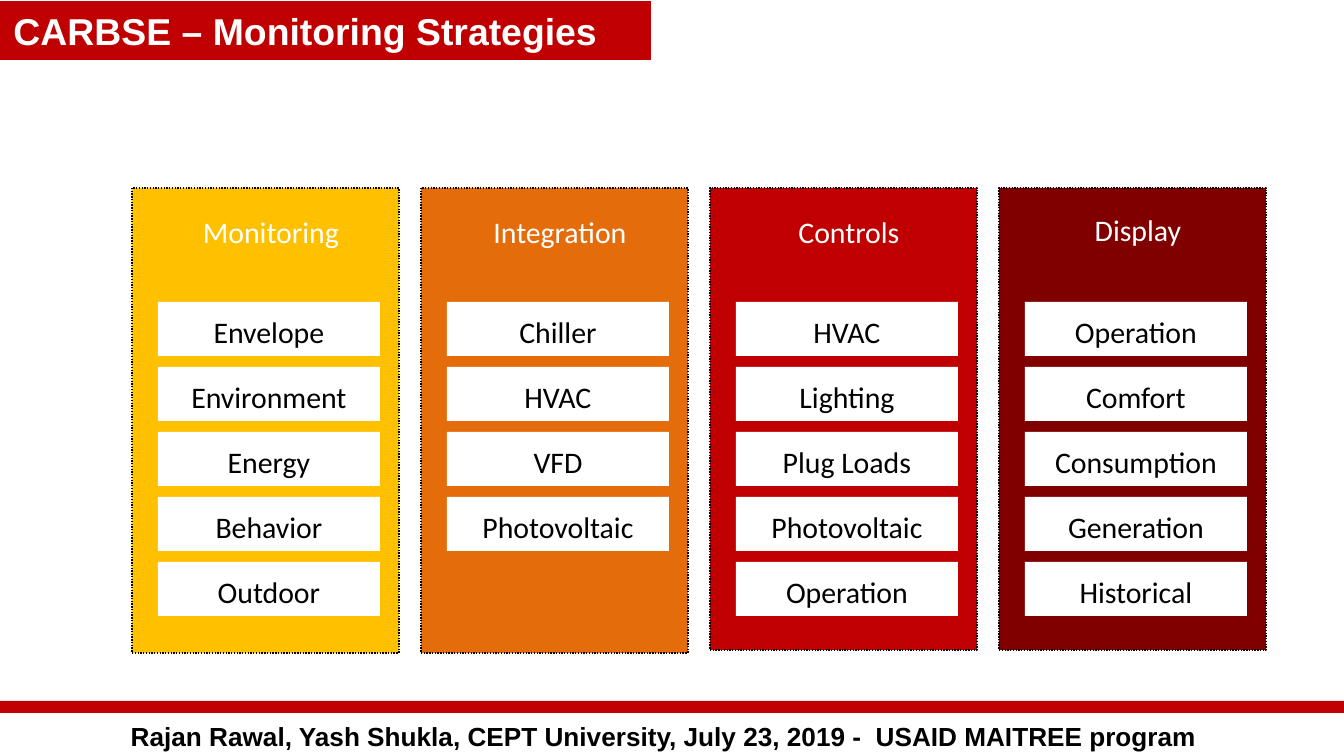
from pptx import Presentation
from pptx.dml.color import RGBColor
from pptx.enum.dml import MSO_LINE
from pptx.enum.shapes import MSO_SHAPE
from pptx.enum.text import MSO_ANCHOR, MSO_AUTO_SIZE, PP_ALIGN
from pptx.util import Emu, Pt

SCALE = 914400 / 134.4
RED = "C00000"
WHITE = "FFFFFF"
BLACK = "000000"

COLUMN_LEFT, COLUMN_TOP, COLUMN_WIDTH, COLUMN_PITCH = 132, 188, 267, 289
ITEM_TOP, ITEM_PITCH, ITEM_WIDTH, ITEM_HEIGHT = 302, 65, 222, 54
ITEM_INDENT, HEADING_INDENT = 26, 28

COLUMNS = [
    ("Monitoring", "FFC000", 465, 202,
     ["Envelope", "Environment", "Energy", "Behavior", "Outdoor"]),
    ("Integration", "E46C0A", 465, 202,
     ["Chiller", "HVAC", "VFD", "Photovoltaic"]),
    ("Controls", RED, 462, 202,
     ["HVAC", "Lighting", "Plug Loads", "Photovoltaic", "Operation"]),
    ("Display", "800000", 462, 200,
     ["Operation", "Comfort", "Consumption", "Generation", "Historical"]),
]


def px(length):
    return Emu(round(length * SCALE))


def color(code):
    return RGBColor.from_string(code)


def add_rectangle(page, left, top, width, height, fill):
    box = page.shapes.add_shape(
        MSO_SHAPE.RECTANGLE, px(left), px(top), px(width), px(height))
    box.shadow.inherit = False
    box.fill.solid()
    box.fill.fore_color.rgb = color(fill)
    box.line.fill.background()
    return box


def add_text_box(page, left, top, width, height):
    return page.shapes.add_textbox(px(left), px(top), px(width), px(height))


def write(box, text, font, size, ink, bold=False, align=PP_ALIGN.CENTER,
          anchor=MSO_ANCHOR.TOP):
    frame = box.text_frame
    frame.text = text
    frame.word_wrap = True
    frame.auto_size = MSO_AUTO_SIZE.NONE
    frame.vertical_anchor = anchor
    para = frame.paragraphs[0]
    para.alignment = align
    span = para.runs[0].font
    span.name = font
    span.size = Pt(size)
    span.bold = bold
    span.color.rgb = color(ink)
    return para


def write_label(box, text, ink):
    para = write(box, text, "Calibri", 16, ink)
    para.line_spacing = 1.15
    para.space_after = Pt(10)


def add_title(page, text):
    title = page.shapes.title
    title.left, title.top, title.width, title.height = map(px, (0, 1, 651, 59))
    title.fill.solid()
    title.fill.fore_color.rgb = color(RED)
    write(title, text, "Arial", 20, WHITE, True, PP_ALIGN.LEFT, MSO_ANCHOR.MIDDLE)


def add_footer(page, text):
    add_rectangle(page, 0, 701, 1344, 12, RED)
    write(add_text_box(page, 53, 714, 1222, 46), text, "Arial", 14, BLACK, True)


def add_column(page, left, heading, fill, height, heading_top, items):
    panel = add_rectangle(page, left, COLUMN_TOP, COLUMN_WIDTH, height, fill)
    panel.line.color.rgb = color(BLACK)
    panel.line.width = Pt(0.75)
    panel.line.dash_style = MSO_LINE.ROUND_DOT
    label = add_text_box(
        page, left + HEADING_INDENT, heading_top, ITEM_WIDTH, ITEM_HEIGHT)
    write_label(label, heading, WHITE)
    for row, item in enumerate(items):
        top = ITEM_TOP + row * ITEM_PITCH
        box = add_rectangle(
            page, left + ITEM_INDENT, top, ITEM_WIDTH, ITEM_HEIGHT, WHITE)
        write_label(box, item, BLACK)


def main():
    deck = Presentation()
    deck.slide_width, deck.slide_height = px(1344), px(756)
    page = deck.slides.add_slide(deck.slide_layouts[5])
    add_footer(page, "Rajan Rawal, Yash Shukla, CEPT University, July 23, 2019 -  USAID MAITREE program")
    add_title(page, "CARBSE – Monitoring Strategies")
    for index, column in enumerate(COLUMNS):
        add_column(page, COLUMN_LEFT + index * COLUMN_PITCH, *column)
    deck.save("out.pptx")


if __name__ == "__main__":
    main()
